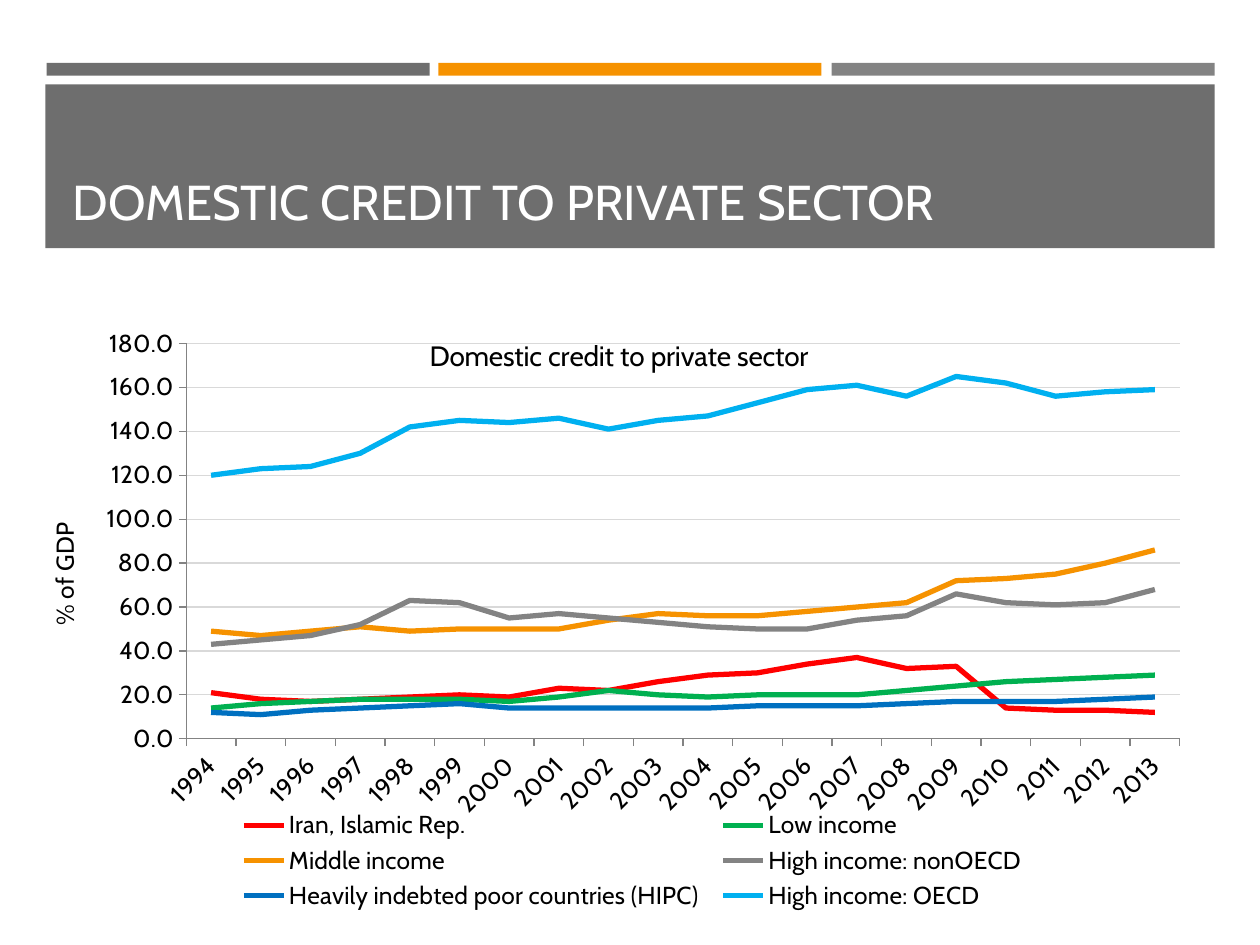
"""Build a slide with a line chart of domestic credit to the private sector."""
from lxml import etree
from pptx import Presentation
from pptx.chart.data import CategoryChartData
from pptx.dml.color import RGBColor
from pptx.enum.chart import XL_CHART_TYPE, XL_LEGEND_POSITION, XL_TICK_MARK
from pptx.enum.shapes import MSO_SHAPE
from pptx.enum.text import MSO_ANCHOR
from pptx.oxml.ns import qn
from pptx.util import Inches, Pt

FONT = "Cabin"


def rgb(value):
    return RGBColor.from_string(value)


def set_layout(parent, index, **settings):
    for old in parent.findall(qn("c:layout")):
        parent.remove(old)
    layout = etree.Element(qn("c:layout"))
    manual = etree.SubElement(layout, qn("c:manualLayout"))
    for tag, value in settings.items():
        etree.SubElement(manual, qn(f"c:{tag}")).set("val", str(value))
    parent.insert(index, layout)


prs = Presentation()
prs.slide_width, prs.slide_height = Inches(10), Inches(7.5)
slide = prs.slides.add_slide(prs.slide_layouts[6])

bands = [
    (0.37, 0.5, 3.04, 0.1, "6E6E6E"),
    (3.48, 0.5, 3.04, 0.1, "F69200"),
    (6.6, 0.5, 3.04, 0.1, "838383"),
    (0.36, 0.67, 9.28, 1.3, "6E6E6E"),
]
for left, top, width, height, color in bands:
    band = slide.shapes.add_shape(
        MSO_SHAPE.RECTANGLE, Inches(left), Inches(top), Inches(width), Inches(height))
    band.shadow.inherit = False
    band.fill.solid()
    band.fill.fore_color.rgb = rgb(color)
    band.line.fill.background()

heading = slide.shapes.add_textbox(Inches(0.48), Inches(0.77), Inches(9.05), Inches(1.11))
heading.text_frame.word_wrap = True
heading.text_frame.vertical_anchor = MSO_ANCHOR.BOTTOM
heading.text_frame.text = "DOMESTIC CREDIT TO PRIVATE SECTOR"
heading_font = heading.text_frame.paragraphs[0].runs[0].font
heading_font.name, heading_font.size = FONT, Pt(28)
heading_font.color.rgb = rgb("FFFFFF")

groups = [
    ("Iran, Islamic Rep.", "FF0000",
     [21, 18, 17, 18, 19, 20, 19, 23, 22, 26, 29, 30, 34, 37, 32, 33, 14, 13, 13, 12]),
    ("Low income", "00B050",
     [14, 16, 17, 18, 18, 18, 17, 19, 22, 20, 19, 20, 20, 20, 22, 24, 26, 27, 28, 29]),
    ("Middle income", "F69200",
     [49, 47, 49, 51, 49, 50, 50, 50, 54, 57, 56, 56, 58, 60, 62, 72, 73, 75, 80, 86]),
    ("High income: nonOECD", "838383",
     [43, 45, 47, 52, 63, 62, 55, 57, 55, 53, 51, 50, 50, 54, 56, 66, 62, 61, 62, 68]),
    ("Heavily indebted poor countries (HIPC)", "0070C0",
     [12, 11, 13, 14, 15, 16, 14, 14, 14, 14, 14, 15, 15, 15, 16, 17, 17, 17, 18, 19]),
    ("High income: OECD", "00B0F0",
     [120, 123, 124, 130, 142, 145, 144, 146, 141, 145,
      147, 153, 159, 161, 156, 165, 162, 156, 158, 159]),
]
credit_data = CategoryChartData(number_format="#,##0.0")
credit_data.categories = [str(year) for year in range(1994, 2014)]
for name, color, values in groups:
    credit_data.add_series(name, values)

chart = slide.shapes.add_chart(
    XL_CHART_TYPE.LINE, Inches(0.34), Inches(2.39), Inches(9.18), Inches(4.88),
    credit_data).chart
chart.font.name, chart.font.size = FONT, Pt(14)
chart.font.color.rgb = rgb("000000")
chart.plots[0].vary_by_categories = False
for series, (name, color, values) in zip(chart.plots[0].series, groups):
    series.smooth = False
    series.format.line.color.rgb = rgb(color)
    series.format.line.width = Pt(3)

years, share = chart.category_axis, chart.value_axis
for axis in (years, share):
    axis.major_tick_mark = XL_TICK_MARK.OUTSIDE
    axis.minor_tick_mark = XL_TICK_MARK.NONE
    axis.format.line.color.rgb = rgb("838383")
    axis.format.line.width = Pt(0.75)
    axis.tick_labels.font.size = Pt(14)
years._element.find(qn("c:txPr")).find(qn("a:bodyPr")).set("rot", "-2700000")
share.minimum_scale, share.maximum_scale, share.major_unit = 0, 180, 20
share.tick_labels.number_format = "#,##0.0"
share.tick_labels.number_format_is_linked = False
share.has_major_gridlines = True
share.major_gridlines.format.line.color.rgb = rgb("D9D9D9")
share.major_gridlines.format.line.width = Pt(0.75)

chart.has_title = True
share.has_title = True
captions = [
    (chart.chart_title, "Domestic credit to private sector", 16),
    (share.axis_title, "% of GDP", 14),
]
for caption, wording, size in captions:
    caption.text_frame.text = wording
    font = caption.text_frame.paragraphs[0].runs[0].font
    font.name, font.size, font.bold = FONT, Pt(size), False
    font.color.rgb = rgb("000000")
share.axis_title.text_frame._txBody.find(qn("a:bodyPr")).set("rot", "-5400000")

chart.has_legend = True
chart.legend.position = XL_LEGEND_POSITION.BOTTOM
chart.legend.include_in_layout = False
chart.legend.font.name, chart.legend.font.size = FONT, Pt(14)
chart.legend.font.color.rgb = rgb("000000")

title_element = chart.chart_title._element
title_element.find(qn("c:overlay")).set("val", "1")
set_layout(title_element, 1, xMode="edge", yMode="edge", x=0.33, y=0.05)
set_layout(chart._chartSpace.chart.plotArea, 0, layoutTarget="inner", xMode="edge",
           yMode="edge", x=0.124, y=0.069, w=0.859, h=0.643)
set_layout(chart.legend._element, 1, xMode="edge", yMode="edge",
           x=0.16, y=0.82, w=0.7, h=0.18)

prs.save("out.pptx")
